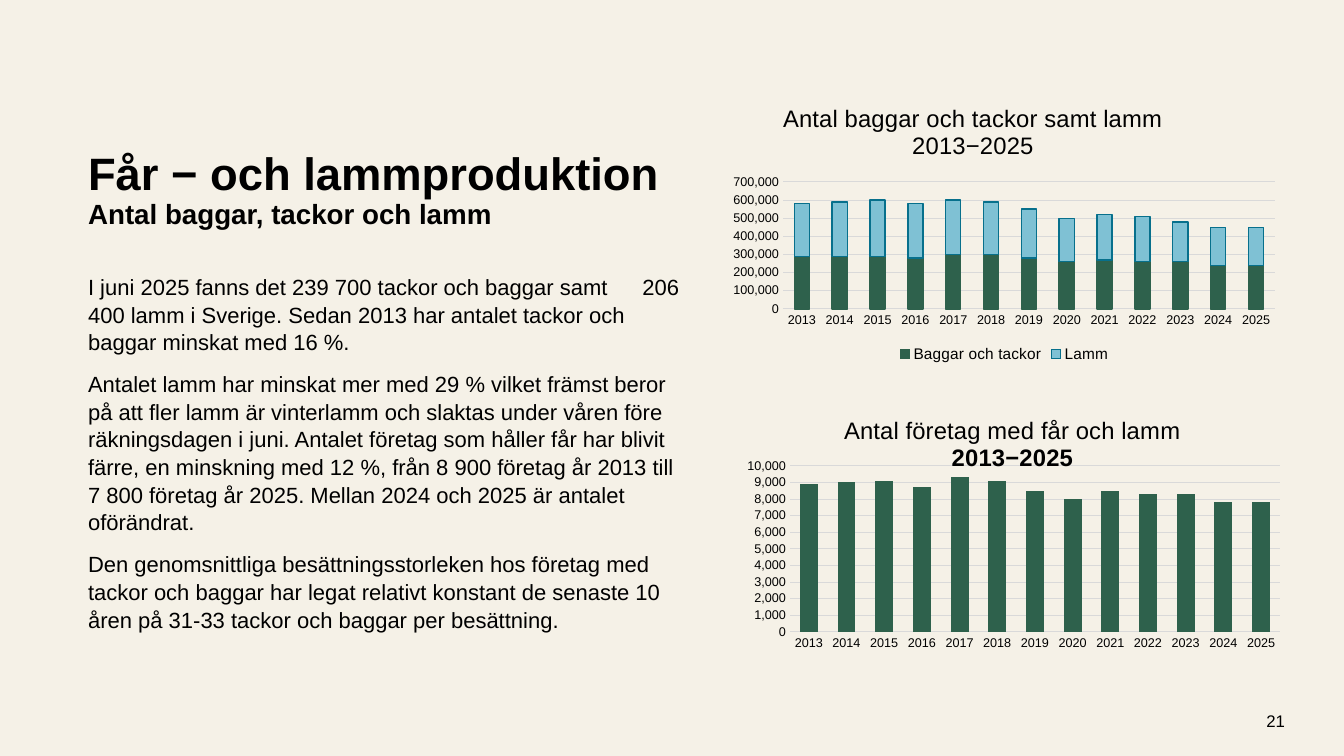
from dataclasses import dataclass

import lxml.etree
import pptx
import pptx.chart.data
import pptx.dml.color
import pptx.enum.chart
import pptx.enum.text
import pptx.oxml
import pptx.oxml.ns
import pptx.util

SCALE = 914400 / 100.8
FONT = "Arial"
BLACK, GREY, GREEN = "000000", "D9D9D9", "2E614C"
YEARS = [str(year) for year in range(2013, 2026)]
CHART_TYPE = pptx.enum.chart.XL_CHART_TYPE


@dataclass
class Box:
    x: int
    y: int
    w: int
    h: int

    def emu(self) -> list[int]:
        return [px(n) for n in (self.x, self.y, self.w, self.h)]


@dataclass
class Series:
    name: str
    values: list[int]
    fill: str
    line: str | None = None


@dataclass
class ColumnChart:
    kind: CHART_TYPE
    box: Box
    plot: Box
    title_at: tuple[int, int]
    title: str
    bold_years: bool
    gap: int
    overlap: int
    top: int
    step: int
    legend: bool
    series: list[Series]


TITLE = Box(78, 146, 594, 109)
BODY = Box(78, 267, 622, 389)
PAGE_NUMBER = Box(1178, 701, 117, 40)

PARAGRAPHS = [
    "I juni 2025 fanns det 239 700 tackor och baggar samt\t206 400 lamm i Sverige. "
    "Sedan 2013 har antalet tackor och baggar minskat med 16 %.",
    "Antalet lamm har minskat mer med 29 % vilket främst beror på att fler lamm är "
    "vinterlamm och slaktas under våren före räkningsdagen i juni. Antalet företag som "
    "håller får har blivit färre, en minskning med 12 %, från 8 900 företag år 2013 till "
    "7 800 företag år 2025. Mellan 2024 och 2025 är antalet oförändrat.",
    "Den genomsnittliga besättningsstorleken hos företag med tackor och baggar har legat "
    "relativt konstant de senaste 10 åren på 31-33 tackor och baggar per besättning.",
]

CHARTS = [
    ColumnChart(
        CHART_TYPE.COLUMN_STACKED, Box(723, 94, 563, 273), Box(783, 182, 492, 127),
        (780, 100), "Antal baggar och tackor samt lamm", False, 150, 100, 700000, 100000, True,
        [
            Series("Baggar och tackor",
                   [n * 10000 for n in (29, 29, 29, 28, 30, 30, 28, 26, 27, 26, 26, 24, 24)],
                   GREEN, GREEN),
            Series("Lamm",
                   [n * 10000 for n in (29, 30, 31, 30, 30, 29, 27, 24, 25, 25, 22, 21, 21)],
                   "7FC1D4", "07708C"),
        ],
    ),
    ColumnChart(
        CHART_TYPE.COLUMN_CLUSTERED, Box(732, 397, 563, 266), Box(790, 466, 490, 166),
        (841, 412), "Antal företag med får och lamm", True, 110, 0, 10000, 1000, False,
        [
            Series("Series 1",
                   [n * 100 for n in (89, 90, 91, 87, 93, 91, 85, 80, 85, 83, 83, 78, 78)],
                   GREEN),
        ],
    ),
]


def px(n: int) -> int:
    return round(n * SCALE)


def rgb(value: str) -> pptx.dml.color.RGBColor:
    return pptx.dml.color.RGBColor.from_string(value)


def style(font, size: float, bold: bool = False, color: str = BLACK) -> None:
    font.name = FONT
    font.size = pptx.util.Pt(size)
    font.bold = bold
    font.color.rgb = rgb(color)


def write(p, text: str, **fmt) -> None:
    r = p.add_run()
    r.text = text
    style(r.font, **fmt)


def set_line(line, color: str, width: float) -> None:
    line.color.rgb = rgb(color)
    line.width = pptx.util.Pt(width)


def place(sp, box: Box):
    sp.left, sp.top, sp.width, sp.height = box.emu()
    tf = sp.text_frame
    tf.word_wrap = True
    tf.auto_size = pptx.enum.text.MSO_AUTO_SIZE.NONE
    tf.vertical_anchor = pptx.enum.text.MSO_ANCHOR.TOP
    return tf


def set_layout(parent, index: int, inner: bool, **fractions: float) -> None:
    for old in parent.findall(pptx.oxml.ns.qn("c:layout")):
        parent.remove(old)
    layout = pptx.oxml.parse_xml(f"<c:layout {pptx.oxml.ns.nsdecls('c')}/>")
    manual = lxml.etree.SubElement(layout, pptx.oxml.ns.qn("c:manualLayout"))
    settings = {"layoutTarget": "inner"} if inner else {}
    settings |= {"xMode": "edge", "yMode": "edge"}
    settings |= {key: f"{value:.4f}" for key, value in fractions.items()}
    for key, value in settings.items():
        lxml.etree.SubElement(manual, pptx.oxml.ns.qn(f"c:{key}")).set("val", value)
    parent.insert(index, layout)


def add_title(s) -> None:
    tf = place(s.shapes.title, TITLE)
    p = tf.paragraphs[0]
    p.alignment = pptx.enum.text.PP_ALIGN.LEFT
    p.line_spacing = 0.9
    write(p, "Får − och lammproduktion", size=32.4, bold=True)
    p.add_line_break()
    write(p, "Antal baggar, tackor och lamm", size=19.8, bold=True)


def add_body(s) -> None:
    tf = place(s.placeholders[1], BODY)
    for i, text in enumerate(PARAGRAPHS):
        p = tf.add_paragraph() if i else tf.paragraphs[0]
        pPr = p._p.get_or_add_pPr()
        pPr.set("marL", "0")
        pPr.set("indent", "0")
        lxml.etree.SubElement(pPr, pptx.oxml.ns.qn("a:buNone"))
        tabs = lxml.etree.SubElement(pPr, pptx.oxml.ns.qn("a:tabLst"))
        tab = lxml.etree.SubElement(tabs, pptx.oxml.ns.qn("a:tab"))
        tab.set("pos", str(px(555)))
        tab.set("algn", "l")
        p.line_spacing = 1.05
        p.space_before = pptx.util.Pt(10 if i else 0)
        write(p, text, size=15.7)


def add_page_number(s) -> None:
    tf = place(s.shapes.add_textbox(*PAGE_NUMBER.emu()), PAGE_NUMBER)
    tf.vertical_anchor = pptx.enum.text.MSO_ANCHOR.MIDDLE
    p = tf.paragraphs[0]
    p.alignment = pptx.enum.text.PP_ALIGN.RIGHT
    write(p, "21", size=12)


def add_column_chart(s, item: ColumnChart) -> None:
    data = pptx.chart.data.CategoryChartData()
    data.categories = YEARS
    for series in item.series:
        data.add_series(series.name, series.values)
    chart = s.shapes.add_chart(item.kind, *item.box.emu(), data).chart
    style(chart.font, 10)

    chart.has_title = True
    tf = chart.chart_title.text_frame
    write(tf.paragraphs[0], item.title, size=17)
    write(tf.add_paragraph(), "2013−2025", size=17, bold=item.bold_years)
    box, plot = item.box, item.plot
    title_x, title_y = item.title_at
    set_layout(chart.chart_title._element, 1, False,
               x=(title_x - box.x) / box.w, y=(title_y - box.y) / box.h)
    set_layout(chart._chartSpace.chart.plotArea, 0, True,
               x=(plot.x - box.x) / box.w, y=(plot.y - box.y) / box.h,
               w=plot.w / box.w, h=plot.h / box.h)

    chart.has_legend = item.legend
    if item.legend:
        chart.legend.position = pptx.enum.chart.XL_LEGEND_POSITION.BOTTOM
        chart.legend.include_in_layout = False
        style(chart.legend.font, 11)

    for axis in (chart.category_axis, chart.value_axis):
        axis.major_tick_mark = axis.minor_tick_mark = pptx.enum.chart.XL_TICK_MARK.NONE
        style(axis.tick_labels.font, 9)
    set_line(chart.category_axis.format.line, GREY, 0.75)
    values = chart.value_axis
    values.format.line.fill.background()
    values.minimum_scale, values.maximum_scale, values.major_unit = 0, item.top, item.step
    values.tick_labels.number_format = "#,##0"
    values.tick_labels.number_format_is_linked = False
    set_line(values.major_gridlines.format.line, GREY, 0.75)

    columns = chart.plots[0]
    columns.vary_by_categories = False
    columns.gap_width, columns.overlap = item.gap, item.overlap
    for drawn, series in zip(columns.series, item.series):
        drawn.format.fill.solid()
        drawn.format.fill.fore_color.rgb = rgb(series.fill)
        if series.line:
            set_line(drawn.format.line, series.line, 1)


def main() -> None:
    prs = pptx.Presentation()
    prs.slide_width, prs.slide_height = px(1344), px(756)
    s = prs.slides.add_slide(prs.slide_layouts[1])
    s.background.fill.solid()
    s.background.fill.fore_color.rgb = rgb("F5F1E7")
    add_title(s)
    add_page_number(s)
    add_body(s)
    for item in CHARTS:
        add_column_chart(s, item)
    prs.save("out.pptx")


if __name__ == "__main__":
    main()
